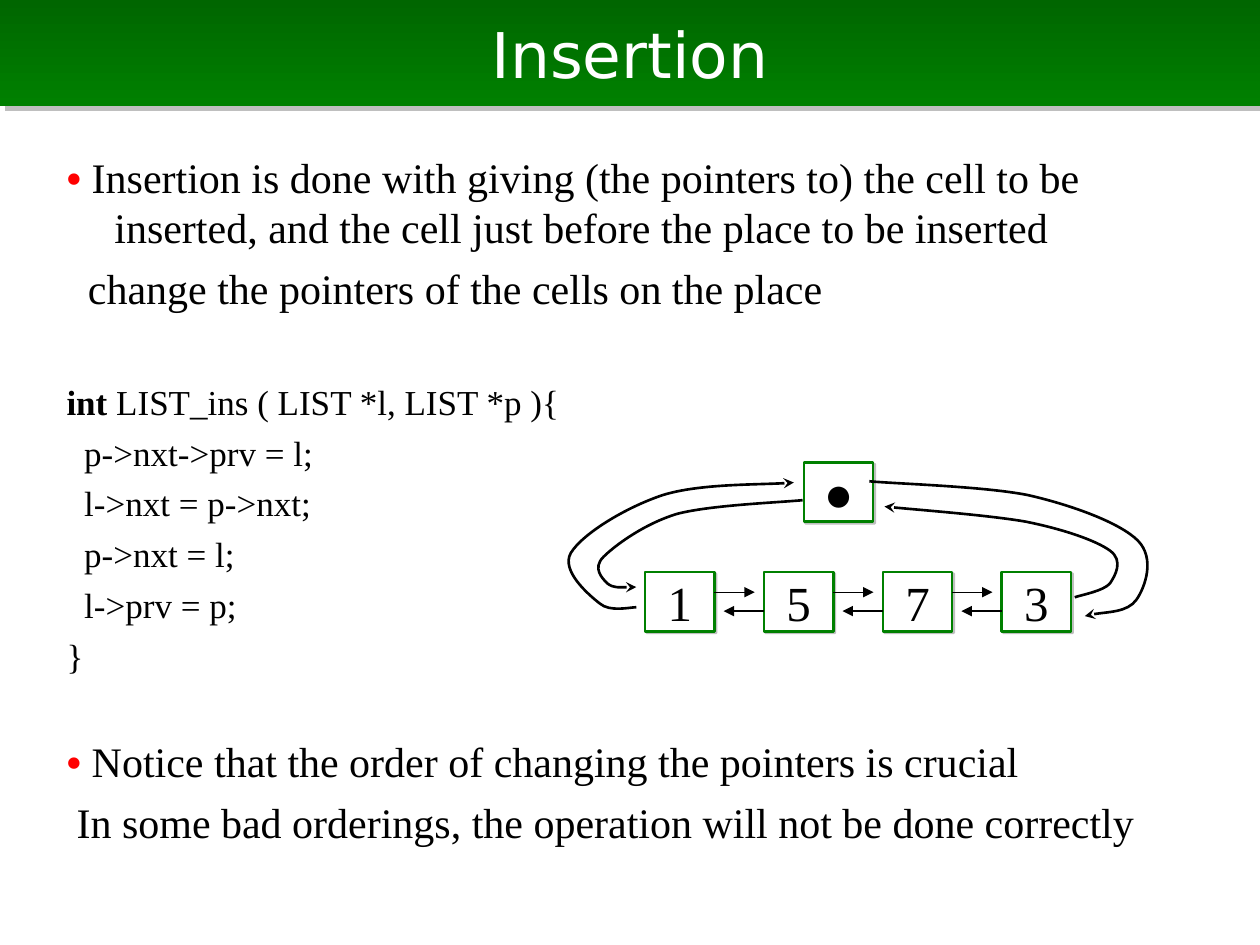
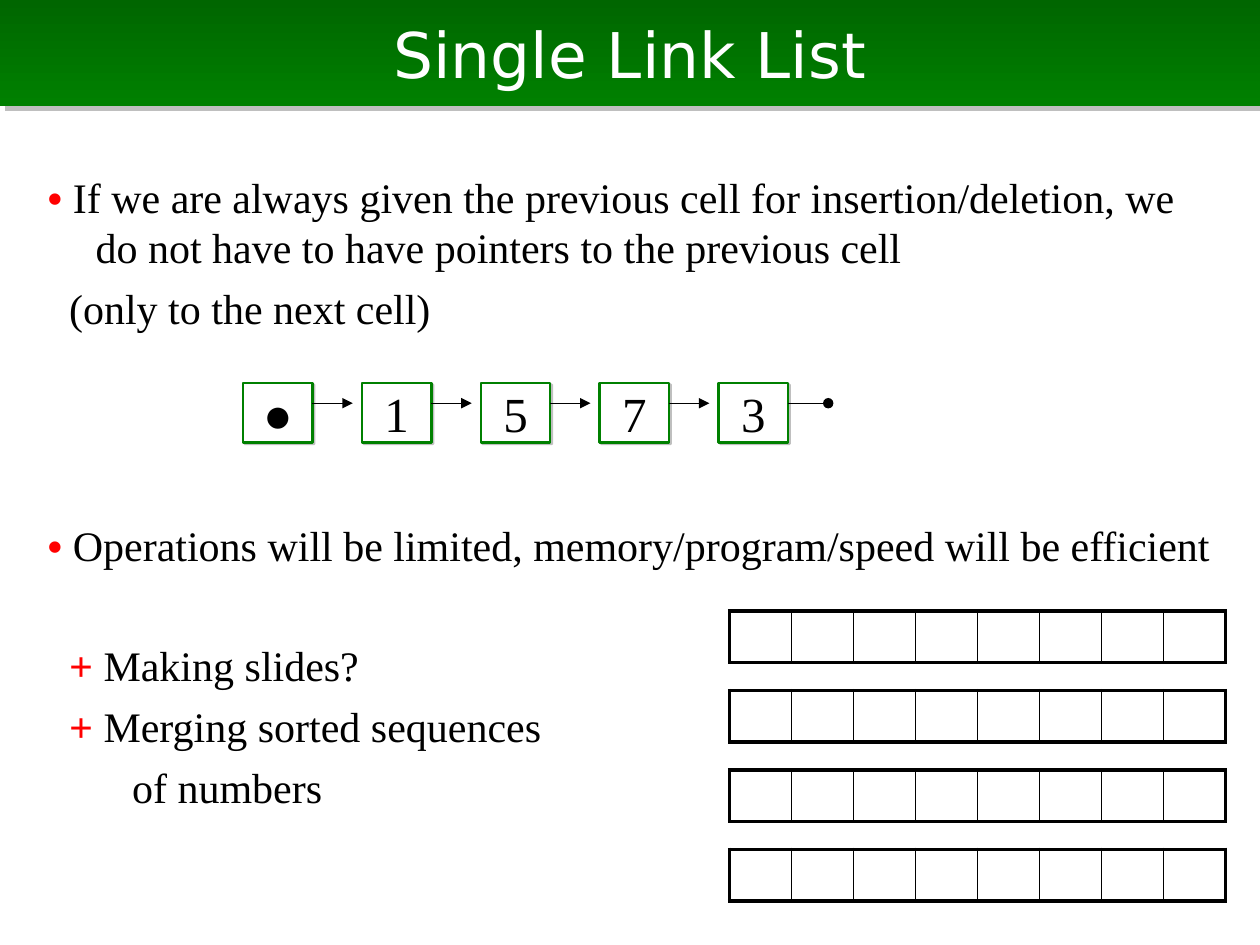
from pptx import Presentation
from pptx.dml.color import RGBColor
from pptx.enum.shapes import MSO_CONNECTOR, MSO_SHAPE
from pptx.enum.text import MSO_ANCHOR, PP_ALIGN
from pptx.oxml.ns import qn
from pptx.oxml.xmlchemy import OxmlElement
from pptx.util import Inches, Pt

RECT = MSO_SHAPE.RECTANGLE
STRAIGHT = MSO_CONNECTOR.STRAIGHT
MIDDLE = MSO_ANCHOR.MIDDLE
CENTER = PP_ALIGN.CENTER

COLORS = {
    "band_top": "006600",
    "green": "008000",
    "shadow": "808080",
    "white": "FFFFFF",
    "black": "000000",
    "red": "FF0000",
}
TITLE_FONT = "DejaVu Sans"
BODY_FONT = "Times New Roman"
HANG = 0.38
NODE_W, NODE_H = 0.55, 0.47
NODE_PITCH = 2.83 / 3
ARROW = 0.32
NEXT_Y, PREV_Y = 0.16, 0.31
THIN, THICK = 1, 2.25


def rgb(name):
    return RGBColor.from_string(COLORS[name])


def add_xml(parent, tag, **attrs):
    el = OxmlElement(tag)
    for key, value in attrs.items():
        el.set(key, str(value))
    parent.append(el)
    return el


def write(p, text, size, color="black", bold=False, font=BODY_FONT):
    r = p.add_run()
    r.text = text
    formats = {"name": font, "size": Pt(size), "bold": bold}
    for key, value in formats.items():
        setattr(r.font, key, value)
    r.font.color.rgb = rgb(color)


def set_shadow(s, distance):
    s.shadow.inherit = False
    effects = s._element.spPr.find(qn("a:effectLst"))
    shadow = add_xml(effects, "a:outerShdw", blurRad=0, dist=Pt(distance),
                     dir=45 * 60000, algn="ctr", rotWithShape=0)
    color = add_xml(shadow, "a:srgbClr", val=COLORS["shadow"])
    add_xml(color, "a:alpha", val=50000)


def set_line(s, width, color="black", **ends):
    s.line.color.rgb = rgb(color)
    s.line.width = Pt(width)
    for end, kind in ends.items():
        add_xml(s.line._get_or_add_ln(), f"a:{end}End", type=kind)


def add_title_slide(prs, text):
    slide = prs.slides.add_slide(prs.slide_layouts[5])
    s = slide.shapes.title
    box = {"left": 0, "top": 0, "width": prs.slide_width, "height": Inches(0.84)}
    for key, value in box.items():
        setattr(s, key, value)
    s.fill.gradient()
    s.fill.gradient_angle = 270
    for stop, color in zip(s.fill.gradient_stops, ("band_top", "green")):
        stop.color.rgb = rgb(color)
    set_shadow(s, 4.2)
    tf = s.text_frame
    tf.vertical_anchor = MIDDLE
    p = tf.paragraphs[0]
    p.alignment = CENTER
    write(p, text, 36, "white", font=TITLE_FONT)
    return slide


def add_body(slide, x, y, w, h):
    tf = slide.shapes.add_textbox(*map(Inches, (x, y, w, h))).text_frame
    tf.word_wrap = True
    return tf


def add_para(tf, text, size=24, lead="", lead_color="red", indent=None, skip=0):
    p = tf.paragraphs[0]
    if p.runs:
        p = tf.add_paragraph()
    p.space_before = Pt(size / 4 + skip)
    pPr = p._p.get_or_add_pPr()
    hanging = indent is None
    pPr.set("marL", str(Inches(HANG if hanging else indent)))
    pPr.set("indent", str(Inches(-HANG if hanging else 0)))
    if lead:
        write(p, lead + " ", size, lead_color, bold=True)
    write(p, text, size)


def add_node(slide, text, x, y):
    s = slide.shapes.add_shape(RECT, *map(Inches, (x, y, NODE_W, NODE_H)))
    s.fill.solid()
    s.fill.fore_color.rgb = rgb("white")
    set_line(s, 1.5, "green")
    set_shadow(s, 1.4)
    tf = s.text_frame
    tf.word_wrap = False
    tf.vertical_anchor = MIDDLE
    p = tf.paragraphs[0]
    p.alignment = CENTER
    write(p, text, 28)


def add_arrow(slide, x1, x2, y, tail="triangle"):
    s = slide.shapes.add_connector(STRAIGHT, *map(Inches, (x1, y, x2, y)))
    set_line(s, 0.75, tail=tail)
    add_xml(s._element.spPr, "a:effectLst")


def add_next_arrow(slide, x, y, tail="triangle"):
    add_arrow(slide, x + NODE_W, x + NODE_W + ARROW, y + NEXT_Y, tail)


def add_curve(slide, points, **ends):
    start, *rest = [(Inches(x), Inches(y)) for x, y in points]
    builder = slide.shapes.build_freeform(*start)
    builder.add_line_segments(rest, close=False)
    s = builder.convert_to_shape()
    segments = list(s._element.iter(qn("a:lnTo")))
    for i in range(0, len(segments), 3):
        bezier = OxmlElement("a:cubicBezTo")
        segments[i].addprevious(bezier)
        for segment in segments[i:i + 3]:
            bezier.append(segment[0])
            segment.getparent().remove(segment)
    s.fill.background()
    set_line(s, 1.5, **ends)
    s.shadow.inherit = False


def add_border(tcPr, side, width):
    ln = add_xml(tcPr, f"a:ln{side}", w=Pt(width))
    fill = add_xml(ln, "a:solidFill")
    add_xml(fill, "a:srgbClr", val=COLORS["black"])


def add_sequence(slide, x, y, w, h, count):
    table = slide.shapes.add_table(1, count, *map(Inches, (x, y, w, h))).table
    table.first_row = table.horz_banding = False
    for i, cell in enumerate(table.rows[0].cells):
        tcPr = cell._tc.get_or_add_tcPr()
        widths = {
            "L": THICK if i == 0 else THIN,
            "R": THICK if i == count - 1 else THIN,
            "T": THICK,
            "B": THICK,
        }
        for side, width in widths.items():
            add_border(tcPr, side, width)
        cell.fill.background()


def build_insertion(prs):
    slide = add_title_slide(prs, "Insertion")
    tf = add_body(slide, 0.43, 1.15, 8.9, 5.43)
    add_para(tf, "Insertion is done with giving (the pointers to) the cell to be "
             "inserted, and the cell just before the place to be inserted", lead="•")
    add_para(tf, "change the pointers of the cells on the place", indent=0.17)
    add_para(tf, "LIST_ins ( LIST *l, LIST *p ){", 20, "int", "black", skip=33.6)
    for code in ("p->nxt->prv = l;", "l->nxt = p->nxt;", "p->nxt = l;", "l->prv = p;"):
        add_para(tf, code, 20, indent=0.14)
    add_para(tf, "}", 20)
    add_para(tf, "Notice that the order of changing the pointers is crucial",
             lead="•", skip=28)
    add_para(tf, "In some bad orderings, the operation will not be done correctly",
             indent=0.08)

    add_node(slide, "●", 6.38, 3.67)
    add_curve(slide, [
        (6.9, 3.82), (7.11, 3.84), (7.81, 3.86), (8.16, 3.93),
        (8.51, 4.01), (8.89, 4.15), (9.03, 4.29),
        (9.17, 4.43), (9.09, 4.66), (9.02, 4.76),
        (8.95, 4.86), (8.7, 4.86), (8.61, 4.89)], tail="stealth")
    add_curve(slide, [
        (7.02, 4.02), (7.2, 4.04), (7.85, 4.09), (8.14, 4.14),
        (8.44, 4.2), (8.7, 4.29), (8.81, 4.37),
        (8.92, 4.45), (8.85, 4.57), (8.81, 4.63),
        (8.76, 4.69), (8.59, 4.72), (8.53, 4.74)], head="stealth")
    add_curve(slide, [
        (5.05, 4.66), (5.01, 4.66), (4.87, 4.67), (4.82, 4.63),
        (4.78, 4.59), (4.7, 4.51), (4.79, 4.42),
        (4.88, 4.33), (5.11, 4.16), (5.37, 4.08),
        (5.63, 4.01), (6.16, 3.99), (6.37, 3.97)], head="stealth")
    add_curve(slide, [
        (5.05, 4.82), (5, 4.82), (4.84, 4.86), (4.76, 4.79),
        (4.67, 4.72), (4.45, 4.53), (4.53, 4.39),
        (4.62, 4.24), (4.96, 4.03), (5.26, 3.93),
        (5.55, 3.84), (6.09, 3.85), (6.3, 3.83)], tail="stealth")

    values, y = "1573", 4.54
    for i, value in enumerate(values):
        x = 5.12 + i * NODE_PITCH
        add_node(slide, value, x, y)
        if i < len(values) - 1:
            add_next_arrow(slide, x, y)
        if i > 0:
            add_arrow(slide, x, x - ARROW, y + PREV_Y)


def build_single_link_list(prs):
    slide = add_title_slide(prs, "Single Link List")
    tf = add_body(slide, 0.28, 1.31, 9.45, 5.91)
    add_para(tf, "If we are always given the previous cell for insertion/deletion, "
             "we do not have to have pointers to the previous cell", lead="•")
    add_para(tf, "(only to the next cell)", indent=0.17)
    add_para(tf, "Operations will be limited, memory/program/speed will be efficient",
             lead="•", skip=100.8)
    add_para(tf, "Making slides?", lead="+", indent=0.17, skip=33.6)
    add_para(tf, "Merging sorted sequences", lead="+", indent=0.17)
    add_para(tf, "of numbers", indent=0.67)

    values, y = "●1573", 3.04
    for i, value in enumerate(values):
        x = 1.93 + i * NODE_PITCH
        add_node(slide, value, x, y)
        add_next_arrow(slide, x, y, "oval" if i == len(values) - 1 else "triangle")

    for row in range(4):
        add_sequence(slide, 5.79, 4.85 + row * 0.63, 3.94, 0.41, 8)


def main():
    prs = Presentation()
    prs.slide_width, prs.slide_height = Inches(10), Inches(7.5)
    build_insertion(prs)
    build_single_link_list(prs)
    prs.save("out.pptx")


if __name__ == "__main__":
    main()
